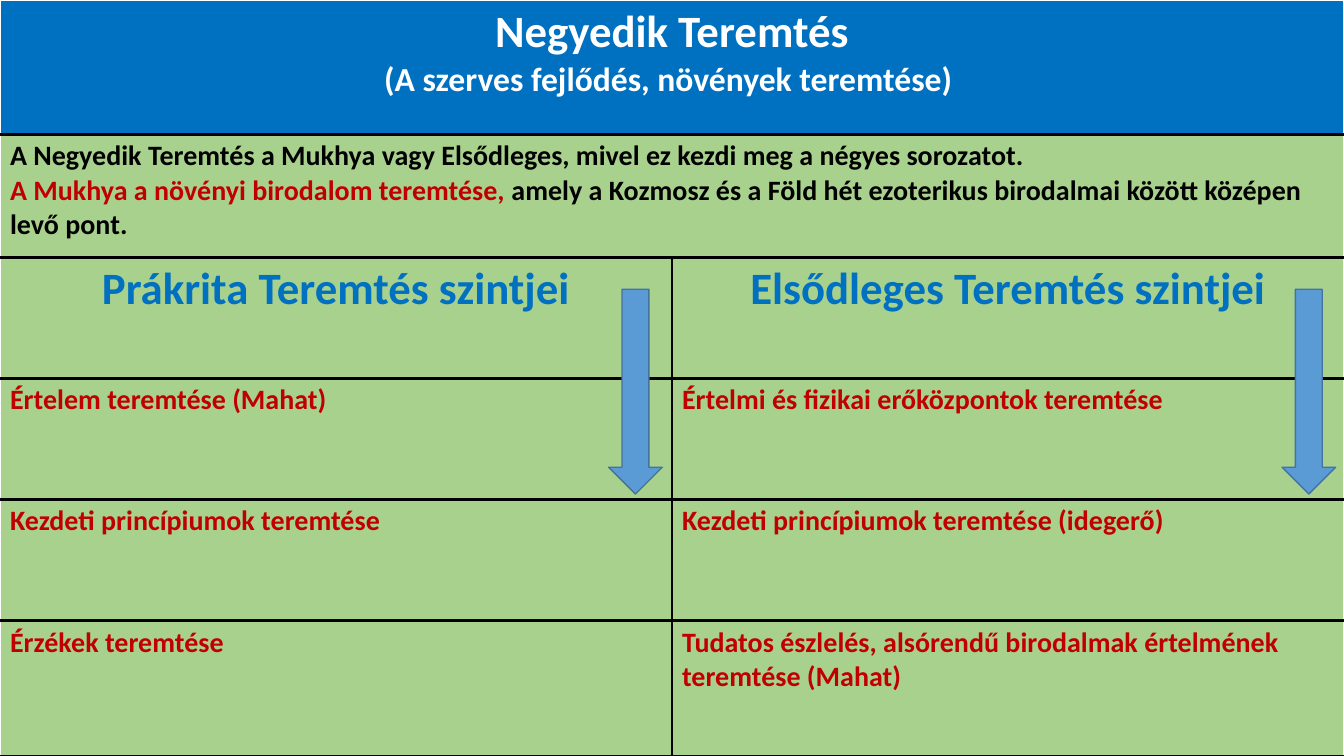
import pptx
import pptx.dml.color
import pptx.enum.shapes
import pptx.enum.text
import pptx.oxml
import pptx.oxml.ns
import pptx.util
from pptx.util import Cm

COLORS = {
    "background": "D6F2FD",
    "blue": "0070C0",
    "green": "A9D18E",
    "red": "C00000",
    "black": "000000",
    "white": "FFFFFF",
    "arrow": "5B9BD5",
    "arrow_line": "43739E",
}
SLIDE_WIDTH, SLIDE_HEIGHT = Cm(33.87), Cm(19.05)
ROW_HEIGHTS = [3.38, 3.1, 3.05, 3.05, 3.05, 3.42]
TITLE = [
    [("Negyedik Teremtés", 32, "white")],
    [("(A szerves fejlődés, növények teremtése) ", 24, "white")],
]
INTRODUCTION = [
    [("A Negyedik Teremtés a Mukhya vagy Elsődleges, mivel ez kezdi meg a négyes sorozatot.", 20, "black")],
    [
        ("A Mukhya a növényi birodalom teremtése, ", 20, "red"),
        ("amely a Kozmosz és a Föld hét ezoterikus birodalmai között középen levő pont.", 20, "black"),
    ],
]
HEADINGS = ["Prákrita Teremtés szintjei", "Elsődleges Teremtés szintjei"]
LEVELS = [
    ["Értelem teremtése (Mahat)", "Értelmi és fizikai erőközpontok teremtése"],
    ["Kezdeti princípiumok teremtése", "Kezdeti princípiumok teremtése (idegerő)"],
    ["Érzékek teremtése", "Tudatos észlelés, alsórendű birodalmak értelmének teremtése (Mahat)"],
]


def rgb(name):
    return pptx.dml.color.RGBColor.from_string(COLORS[name])


def apply_format(target, values):
    for name, value in values.items():
        setattr(target, name, value)


def set_borders(cell, borders):
    properties = cell._tc.get_or_add_tcPr()
    for index, side in enumerate("LRTB"):
        color, width = borders[side]
        line = pptx.oxml.parse_xml(
            f'<a:ln{side} {pptx.oxml.ns.nsdecls("a")} w="{pptx.util.Pt(width)}">'
            f'<a:solidFill><a:srgbClr val="{COLORS[color]}"/></a:solidFill>'
            f'</a:ln{side}>'
        )
        properties.insert(index, line)


def fill_cell(cell, lines, fill, borders, alignment=pptx.enum.text.PP_ALIGN.LEFT):
    cell.fill.solid()
    cell.fill.fore_color.rgb = rgb(fill)
    set_borders(cell, borders)
    frame = cell.text_frame
    for index, line in enumerate(lines):
        paragraph = frame.paragraphs[0] if index == 0 else frame.add_paragraph()
        paragraph.alignment = alignment
        for text, size, color in line:
            run = paragraph.add_run()
            run.text = text
            apply_format(run.font, {"name": "Calibri", "size": pptx.util.Pt(size), "bold": True})
            run.font.color.rgb = rgb(color)


def add_levels_table(slide):
    table = slide.shapes.add_table(len(ROW_HEIGHTS), 2, 0, 0, SLIDE_WIDTH, SLIDE_HEIGHT).table
    apply_format(table, {"first_row": False, "horz_banding": False})
    for row, height in zip(table.rows, ROW_HEIGHTS):
        row.height = Cm(height)
    for column in table.columns:
        column.width = SLIDE_WIDTH // 2

    center = pptx.enum.text.PP_ALIGN.CENTER
    thin, thick = ("white", 1), ("black", 2.25)
    full_width = {"L": thin, "R": thin, "T": thick, "B": thick}
    halves = [{**full_width, "R": thick}, {**full_width, "L": thick}]

    for row in range(2):
        table.cell(row, 0).merge(table.cell(row, 1))
    fill_cell(table.cell(0, 0), TITLE, "blue", {**full_width, "T": thin}, center)
    fill_cell(table.cell(1, 0), INTRODUCTION, "green", full_width)
    for column, borders in enumerate(halves):
        heading = [[(HEADINGS[column], 32, "blue")]]
        fill_cell(table.cell(2, column), heading, "green", borders, center)
        for row, level in enumerate(LEVELS, start=3):
            fill_cell(table.cell(row, column), [[(level[column], 20, "red")]], "green", borders)


def add_down_arrow(slide, left):
    arrow = slide.shapes.add_shape(
        pptx.enum.shapes.MSO_SHAPE.DOWN_ARROW, left, Cm(7.29), Cm(1.35), Cm(5.16)
    )
    arrow.shadow.inherit = False
    arrow.fill.solid()
    arrow.fill.fore_color.rgb = rgb("arrow")
    arrow.line.color.rgb = rgb("arrow_line")
    arrow.line.width = pptx.util.Pt(1)


def main():
    presentation = pptx.Presentation()
    apply_format(presentation, {"slide_width": SLIDE_WIDTH, "slide_height": SLIDE_HEIGHT})
    slide = presentation.slides.add_slide(presentation.slide_layouts[6])
    slide.background.fill.solid()
    slide.background.fill.fore_color.rgb = rgb("background")
    add_levels_table(slide)
    for left in (15.34, 32.31):
        add_down_arrow(slide, Cm(left))
    presentation.save("out.pptx")


if __name__ == "__main__":
    main()
